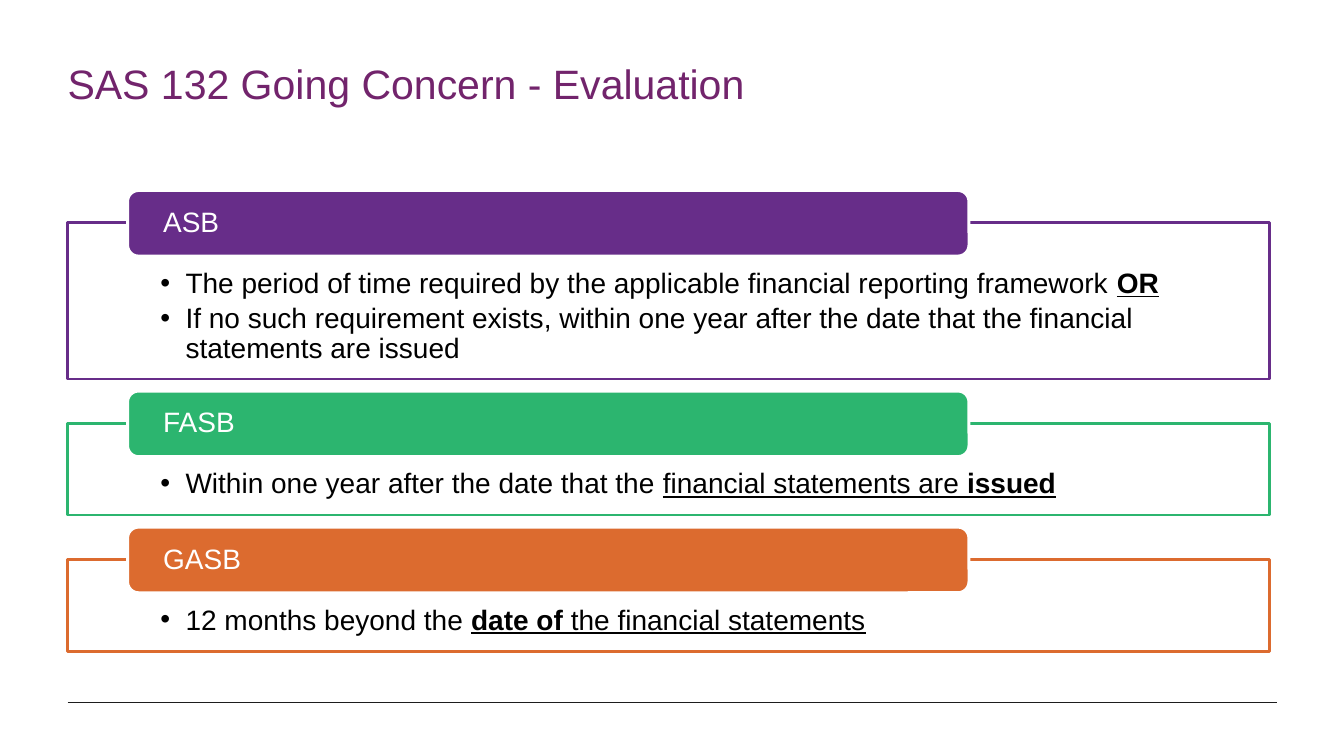
import pptx
import pptx.util
import pptx.dml.color
import pptx.enum.shapes
import pptx.enum.text
import pptx.oxml
import pptx.oxml.ns
from lxml import etree

Inches = pptx.util.Inches
Pt = pptx.util.Pt
MSO_SHAPE = pptx.enum.shapes.MSO_SHAPE
ANCHOR = pptx.enum.text.MSO_ANCHOR
ALIGN = pptx.enum.text.PP_ALIGN

COLORS = {
    "title": "72246C",
    "asb": "672D89",
    "fasb": "2CB56F",
    "gasb": "DC6B2F",
    "white": "FFFFFF",
    "black": "000000",
    "rule": "1D1D1D",
}
FONT = "Arial"
TAB_HEIGHT = 0.65
TAB_OVERHANG = 0.32
STANDARD_GAP = 0.12

STANDARDS = [
    ("ASB", "asb", 1.55, [
        [("The period of time required by the applicable financial reporting framework ", ""),
         ("OR", "bu")],
        [("If no such requirement exists, within one year after the date that "
          "the financial statements are issued", "")],
    ]),
    ("FASB", "fasb", 0.91, [
        [("Within one year after the date that the ", ""),
         ("financial statements are ", "u"), ("issued", "bu")],
    ]),
    ("GASB", "gasb", 0.91, [
        [("12 months beyond the ", ""), ("date of", "bu"),
         (" the financial statements", "u")],
    ]),
]


def rgb(name):
    return pptx.dml.color.RGBColor.from_string(COLORS[name])


def add_child(parent, tag, **attributes):
    child = etree.SubElement(parent, pptx.oxml.ns.qn(tag))
    for key, value in attributes.items():
        child.set(key, value)
    return child


def style_run(run, size, color, emphasis=""):
    run.font.name = FONT
    run.font.size = Pt(size)
    run.font.color.rgb = rgb(color)
    run.font.bold = "b" in emphasis
    run.font.underline = "u" in emphasis


def set_frame(text_frame, left, top, right, bottom, anchor):
    text_frame.word_wrap = True
    text_frame.margin_left = Inches(left)
    text_frame.margin_top = Inches(top)
    text_frame.margin_right = Inches(right)
    text_frame.margin_bottom = Inches(bottom)
    text_frame.vertical_anchor = anchor


def add_block(slide, kind, left, top, width, height, fill, line):
    block = slide.shapes.add_shape(
        kind, Inches(left), Inches(top), Inches(width), Inches(height))
    block.shadow.inherit = False
    block.fill.solid()
    block.fill.fore_color.rgb = rgb(fill)
    block.line.color.rgb = rgb(line)
    block.line.width = Pt(2)
    return block


def add_bullet(paragraph, pieces):
    paragraph.alignment = ALIGN.LEFT
    paragraph.line_spacing = 0.9
    paragraph.space_after = Pt(3.5)
    properties = paragraph._p.get_or_add_pPr()
    properties.set("marL", str(Inches(0.25)))
    properties.set("indent", str(-Inches(0.25)))
    add_child(properties, "a:buFont", typeface=FONT)
    add_child(properties, "a:buChar", char="•")
    for text, emphasis in pieces:
        run = paragraph.add_run()
        run.text = text
        style_run(run, 20, "black", emphasis)


def add_title(slide, left, top, width, height):
    title = slide.shapes.title
    title.left, title.top = Inches(left), Inches(top)
    title.width, title.height = Inches(width), Inches(height)
    title.text_frame.text = "SAS 132 Going Concern - Evaluation"
    set_frame(title.text_frame, 0, 0, 0, 0, ANCHOR.TOP)
    heading = title.text_frame.paragraphs[0]
    heading.alignment = ALIGN.LEFT
    style_run(heading.runs[0], 29.3, "title")


def add_standard(slide, left, top, width, height, name, color, bullets):
    body = add_block(slide, MSO_SHAPE.RECTANGLE, left, top + TAB_OVERHANG,
                     width, height, "white", color)
    fill_color = body.fill._xPr.find(".//" + pptx.oxml.ns.qn("a:srgbClr"))
    add_child(fill_color, "a:alpha", val="90000")
    set_frame(body.text_frame, 0.92, 0.46, 0.92, 0.16, ANCHOR.TOP)
    for index, pieces in enumerate(bullets):
        paragraph = (body.text_frame.add_paragraph() if index
                     else body.text_frame.paragraphs[0])
        add_bullet(paragraph, pieces)

    tab = add_block(slide, MSO_SHAPE.ROUNDED_RECTANGLE, left + 0.05 * width, top,
                    0.7 * width, TAB_HEIGHT, color, "white")
    tab.text_frame.text = name
    set_frame(tab.text_frame, 0.32, 0, 0.32, 0, ANCHOR.MIDDLE)
    label = tab.text_frame.paragraphs[0]
    label.alignment = ALIGN.LEFT
    label.line_spacing = 0.9
    style_run(label.runs[0], 20, "white")


def add_standards(slide, left, top, width):
    for name, color, height, bullets in STANDARDS:
        add_standard(slide, left, top, width, height, name, color, bullets)
        top += TAB_OVERHANG + height + STANDARD_GAP


def add_footer_rule(slide, left, top, width):
    rule = slide.shapes.add_connector(
        pptx.enum.shapes.MSO_CONNECTOR.STRAIGHT,
        Inches(left), Inches(top), Inches(left + width), Inches(top))
    rule.line.color.rgb = rgb("rule")
    rule.line.width = Pt(0.5)
    add_child(rule._element.spPr, "a:effectLst")


def main():
    deck = pptx.Presentation()
    deck.slide_width, deck.slide_height = Inches(13.33), Inches(7.5)
    slide = deck.slides.add_slide(deck.slide_layouts[5])
    add_footer_rule(slide, 0.67, 6.97, 12)
    add_title(slide, 0.67, 0.58, 11.33, 0.63)
    add_standards(slide, 0.67, 1.89, 11.92)
    deck.save("out.pptx")


if __name__ == "__main__":
    main()
